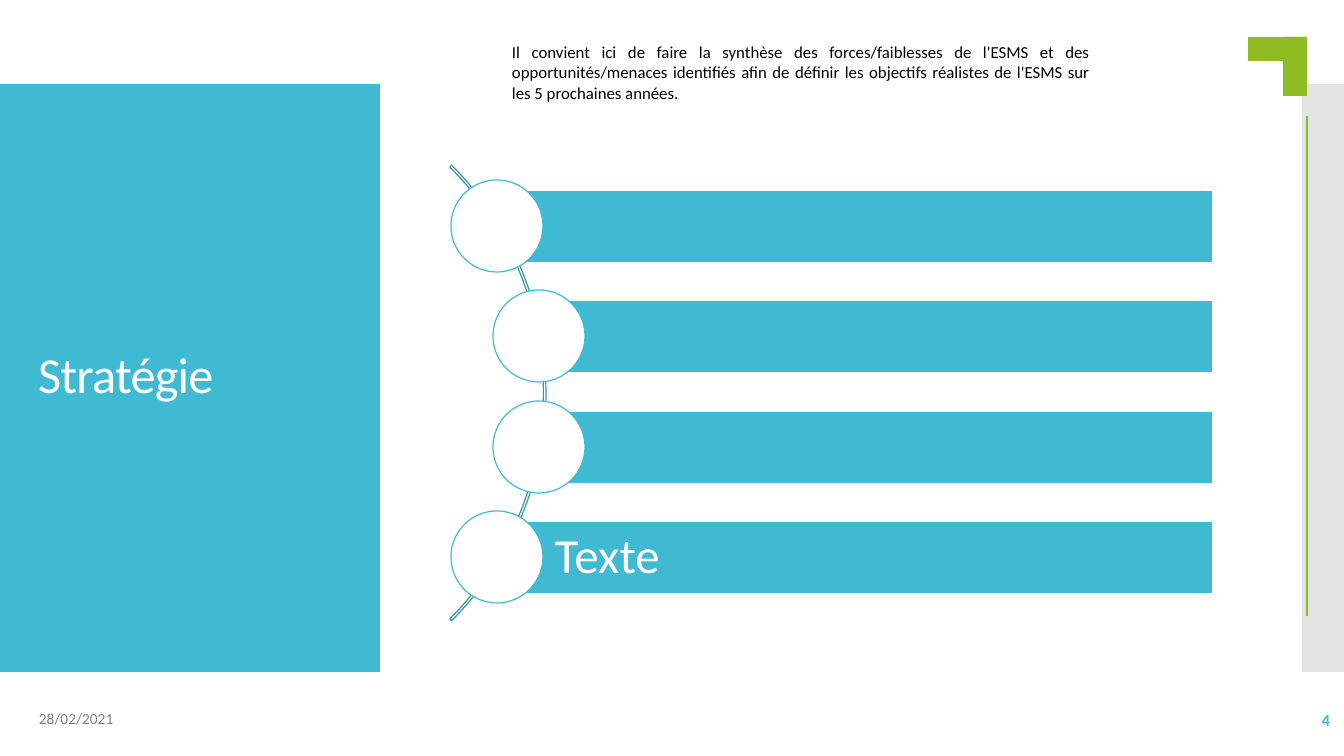
from dataclasses import dataclass

from lxml.etree import SubElement
from pptx import Presentation
from pptx.dml.color import RGBColor
from pptx.enum.shapes import MSO_CONNECTOR, MSO_SHAPE
from pptx.enum.text import MSO_ANCHOR, MSO_AUTO_SIZE, PP_ALIGN
from pptx.oxml.ns import qn
from pptx.shapes.autoshape import Shape
from pptx.slide import Slide
from pptx.text.text import TextFrame
from pptx.util import Emu, Pt

COLOURS = {
    "teal": "40BAD2",
    "dark teal": "3395A8",
    "green": "90BB23",
    "light grey": "C8C8C8",
    "grey": "808080",
    "white": "FFFFFF",
    "black": "000000",
}
FONT = "Calibri"
OUTLINE = 0.85

BAR_RIGHT, BAR_HEIGHT = 1213, 73
FIRST_BAR_TOP, LAST_BAR_TOP = 190, 521
CIRCLE_SIZE = 92


@dataclass(frozen=True)
class Box:
    left: int
    top: int
    width: int
    height: int


@dataclass(frozen=True)
class TextStyle:
    size: int
    colour: str
    align: PP_ALIGN = PP_ALIGN.LEFT
    anchor: MSO_ANCHOR = MSO_ANCHOR.MIDDLE
    spacing: float | Pt = 1.0
    bold: bool = False


@dataclass(frozen=True)
class Label:
    text: str
    box: Box
    style: TextStyle


@dataclass(frozen=True)
class Step:
    left: int
    text: str = ""


SIDE_PANEL = Box(0, 84, 380, 588)
RIGHT_BAND = Box(1302, 84, 42, 588)
CORNER = [Box(1283, 37, 24, 59), Box(1248, 37, 59, 24)]
ARC = Box(-98, 71, 644, 644)
STEPS = [Step(497), Step(539), Step(539), Step(497, "Texte")]
STEP_STYLE = TextStyle(35, "white", spacing=0.9)
TITLE = Label("Stratégie", Box(28, 124, 325, 507), TextStyle(36, "white", spacing=0.9))
LABELS = [
    Label("28/02/2021", Box(29, 701, 302, 40), TextStyle(11, "grey", spacing=Pt(10.1))),
    Label("4", Box(1172, 701, 168, 40),
          TextStyle(12, "teal", PP_ALIGN.RIGHT, spacing=Pt(13.1), bold=True)),
    Label("Il convient ici de faire la synthèse des forces/faiblesses de l'ESMS et des "
          "opportunités/menaces identifiés afin de définir les objectifs réalistes de "
          "l'ESMS sur les 5 prochaines années.",
          Box(502, 37, 598, 92),
          TextStyle(12, "black", PP_ALIGN.JUSTIFY, MSO_ANCHOR.TOP)),
]


def px(length: int) -> Emu:
    """Convert pixels, 1344 to the slide width, into EMU."""
    return Emu(round(length * 12192000 / 1344))


def bounds(box: Box) -> tuple[Emu, Emu, Emu, Emu]:
    return px(box.left), px(box.top), px(box.width), px(box.height)


def colour(name: str) -> RGBColor:
    return RGBColor.from_string(COLOURS[name])


def add_shape(slide: Slide, kind: MSO_SHAPE, box: Box,
              fill: str | None, outline: str | None = None) -> Shape:
    shape = slide.shapes.add_shape(kind, *bounds(box))
    shape.shadow.inherit = False
    if fill:
        shape.fill.solid()
        shape.fill.fore_color.rgb = colour(fill)
    else:
        shape.fill.background()
    if outline:
        shape.line.color.rgb = colour(outline)
        shape.line.width = Pt(OUTLINE)
    else:
        shape.line.fill.background()
    return shape


def write(frame: TextFrame, text: str, style: TextStyle) -> None:
    frame.word_wrap = True
    frame.auto_size = MSO_AUTO_SIZE.NONE
    frame.vertical_anchor = style.anchor
    para = frame.paragraphs[0]
    para.add_run().text = text
    para.alignment = style.align
    para.line_spacing = style.spacing
    para.font.name = FONT
    para.font.size = Pt(style.size)
    para.font.bold = style.bold
    para.font.color.rgb = colour(style.colour)


def add_template_decor(slide: Slide) -> None:
    add_shape(slide, MSO_SHAPE.RECTANGLE, SIDE_PANEL, "teal")
    band = add_shape(slide, MSO_SHAPE.RECTANGLE, RIGHT_BAND, "light grey")
    band_colour = next(band.element.iter(qn("a:srgbClr")))
    SubElement(band_colour, qn("a:alpha"), val="50000")

    rule = slide.shapes.add_connector(
        MSO_CONNECTOR.STRAIGHT, px(1307), px(116), px(1307), px(616))
    rule.line.color.rgb = colour("green")
    rule.line.width = Pt(1.5)
    SubElement(rule.element.spPr, qn("a:effectLst"))

    for box in CORNER:
        add_shape(slide, MSO_SHAPE.RECTANGLE, box, "green")


def add_title(slide: Slide) -> None:
    """Fill the title placeholder and bring it in front of the side panel."""
    title = slide.shapes.title
    title.left, title.top, title.width, title.height = bounds(TITLE.box)
    write(title.text_frame, TITLE.text, TITLE.style)
    for properties in title.element.iter(qn("a:defRPr")):
        properties.set("spc", "-60")
    title.element.getparent().append(title.element)


def add_steps(slide: Slide) -> None:
    arc = add_shape(slide, MSO_SHAPE.BLOCK_ARC, ARC, None, "dark teal")
    for index, value in enumerate((189, 27, 0.004)):
        arc.adjustments[index] = value

    pitch = (LAST_BAR_TOP - FIRST_BAR_TOP) / (len(STEPS) - 1)
    for index, step in enumerate(STEPS):
        top = round(FIRST_BAR_TOP + index * pitch)
        bar = add_shape(slide, MSO_SHAPE.RECTANGLE,
                        Box(step.left, top, BAR_RIGHT - step.left, BAR_HEIGHT),
                        "teal", "white")
        if step.text:
            write(bar.text_frame, step.text, STEP_STYLE)
            bar.text_frame.margin_left = px(58)
        circle = Box(step.left - CIRCLE_SIZE // 2, top + (BAR_HEIGHT - CIRCLE_SIZE) // 2,
                     CIRCLE_SIZE, CIRCLE_SIZE)
        add_shape(slide, MSO_SHAPE.OVAL, circle, "white", "teal")


def main() -> None:
    deck = Presentation()
    deck.slide_width, deck.slide_height = px(1344), px(756)
    slide = deck.slides.add_slide(deck.slide_layouts.get_by_name("Title Only"))
    add_template_decor(slide)
    add_title(slide)
    for label in LABELS:
        text_box = slide.shapes.add_textbox(*bounds(label.box))
        write(text_box.text_frame, label.text, label.style)
    add_steps(slide)
    deck.save("out.pptx")


if __name__ == "__main__":
    main()
